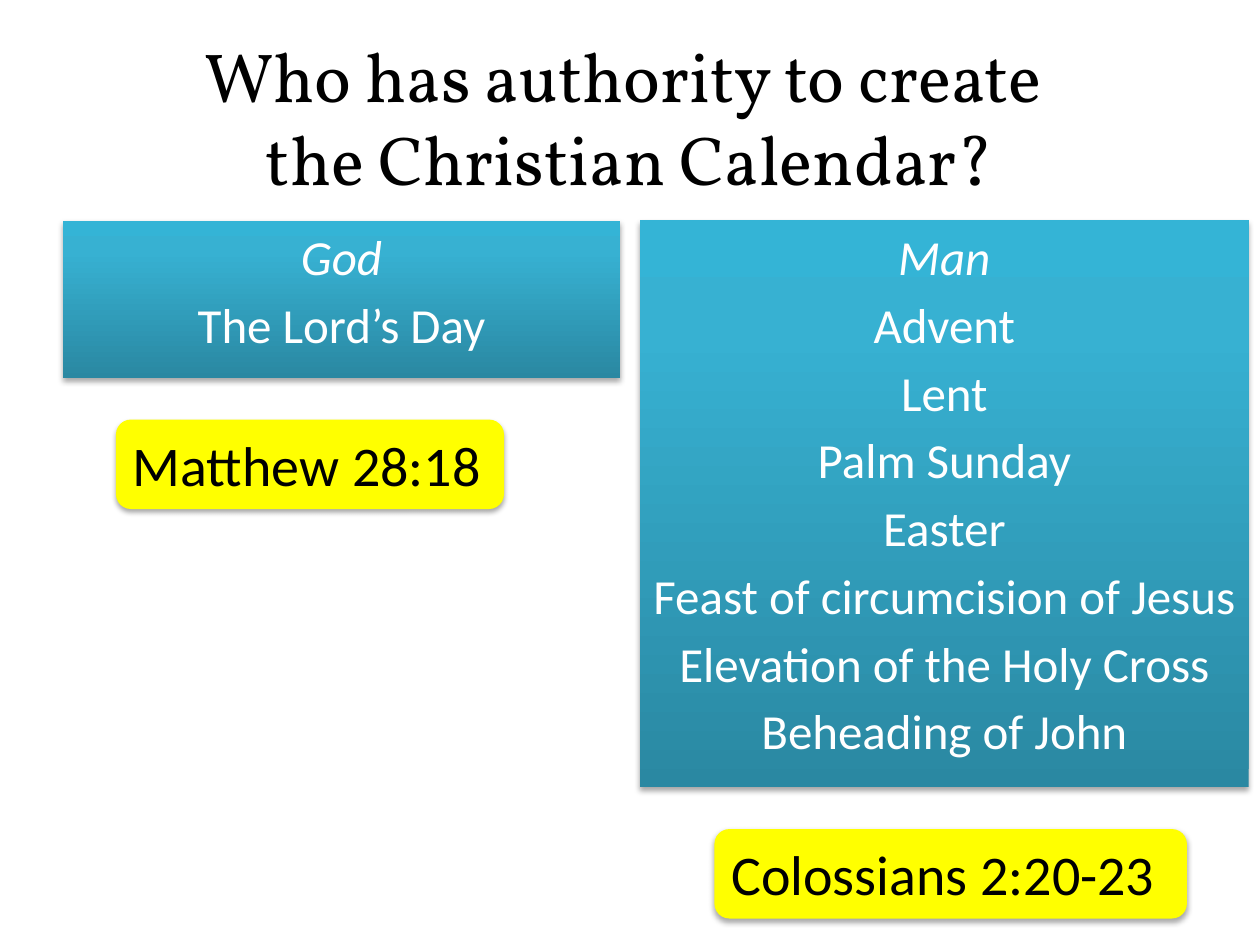
from lxml.etree import SubElement
from pptx import Presentation
from pptx.dml.color import RGBColor
from pptx.enum.shapes import MSO_SHAPE as SHAPE
from pptx.enum.text import MSO_ANCHOR as ANCHOR, MSO_AUTO_SIZE as AUTO, PP_ALIGN as ALIGN
from pptx.oxml.ns import qn
from pptx.util import Inches, Pt

GRADIENT = [(0, "2A88A2"), (80, "37B1D2"), (100, "34B4D6")]
GOD_DAYS = ["God", "The Lord’s Day"]
MAN_DAYS = ["Man", "Advent", "Lent", "Palm Sunday", "Easter",
            "Feast of circumcision of Jesus", "Elevation of the Holy Cross",
            "Beheading of John"]


def rgb(color):
    """Turn a hex string into a colour."""
    return RGBColor.from_string(color)


def set_font(p, name, size, color, italic=False):
    """Set the font of a whole paragraph."""
    p.font.name, p.font.size, p.font.italic = name, Pt(size), italic
    p.font.color.rgb = rgb(color)


def add_color(parent, color):
    """Append a hex colour element and return it."""
    return SubElement(parent, qn("a:srgbClr"), val=color)


def add_shadow(sp):
    """Give a shape a soft shadow below it."""
    sp.shadow.inherit = False
    effects = sp._element.spPr.find(qn("a:effectLst"))
    shadow = SubElement(effects, qn("a:outerShdw"), blurRad="40000", dist="23000",
                        dir="5400000", rotWithShape="0")
    SubElement(add_color(shadow, "000000"), qn("a:alpha"), val="35000")


def fill_gradient(sp):
    """Fill a shape with the panel gradient, running from bottom to top."""
    sp.fill.gradient()
    sp.fill.gradient_angle = 90
    stops = sp._element.spPr.find(qn("a:gradFill")).find(qn("a:gsLst"))
    for stop in list(stops):
        stops.remove(stop)
    for position, color in GRADIENT:
        add_color(SubElement(stops, qn("a:gs"), pos=str(position * 1000)), color)


def add_box(slide, kind, left, top, width, height):
    """Add a shadowed shape without outline and with text from the top."""
    sp = slide.shapes.add_shape(kind, Inches(left), Inches(top), Inches(width), Inches(height))
    sp.line.fill.background()
    add_shadow(sp)
    sp.text_frame.word_wrap = True
    sp.text_frame.vertical_anchor = ANCHOR.TOP
    return sp


def add_title(slide, text):
    """Add the centred slide title."""
    sp = slide.shapes.add_textbox(Inches(0.5), Inches(0.3), Inches(9), Inches(1.25))
    tf = sp.text_frame
    tf.word_wrap = True
    tf.vertical_anchor = ANCHOR.MIDDLE
    p = tf.paragraphs[0]
    p.text = text
    p.alignment = ALIGN.CENTER
    set_font(p, "Vollkorn", 39.6, "000000")


def add_panel(slide, left, width, height, lines):
    """Add a gradient panel whose first line is an italic heading."""
    sp = add_box(slide, SHAPE.RECTANGLE, left, 1.75, width, height)
    fill_gradient(sp)
    tf = sp.text_frame
    tf.text = "\n".join(lines)
    for i, p in enumerate(tf.paragraphs):
        p.alignment = ALIGN.CENTER
        p.space_before = Pt(5.1)
        set_font(p, "Calibri", 28, "FFFFFF", italic=i == 0)


def add_verse(slide, left, top, width, text):
    """Add a yellow label with a Bible reference."""
    sp = add_box(slide, SHAPE.FLOWCHART_ALTERNATE_PROCESS, left, top, width, 0.71)
    sp.fill.solid()
    sp.fill.fore_color.rgb = rgb("FFFF00")
    tf = sp.text_frame
    tf.auto_size = AUTO.SHAPE_TO_FIT_TEXT
    p = tf.paragraphs[0]
    p.text = text
    p.alignment = ALIGN.LEFT
    set_font(p, "Calibri", 32, "000000")


def main():
    """Build the slide and save it."""
    prs = Presentation()
    prs.slide_width, prs.slide_height = Inches(10), Inches(7.5)
    slide = prs.slides.add_slide(prs.slide_layouts[6])
    add_title(slide, "Who has authority to create \vthe Christian Calendar?")
    add_panel(slide, 0.5, 4.42, 1.25, GOD_DAYS)
    add_panel(slide, 5.08, 4.83, 4.5, MAN_DAYS)
    add_verse(slide, 5.67, 6.58, 3.75, "Colossians 2:20-23")
    add_verse(slide, 0.92, 3.33, 3.08, "Matthew 28:18")
    prs.save("out.pptx")


if __name__ == "__main__":
    main()
